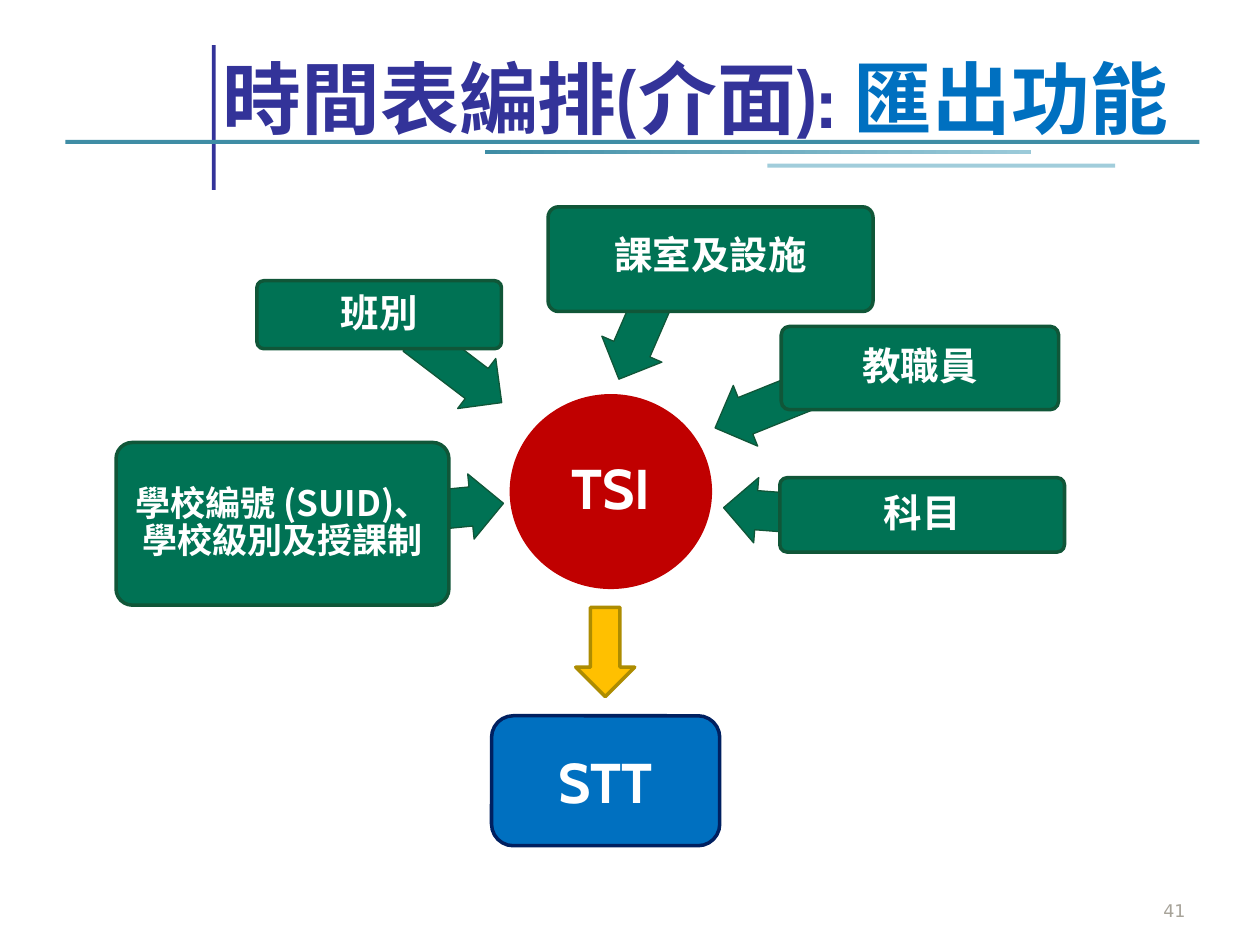
from pptx import Presentation
from pptx.dml.color import RGBColor
from pptx.enum.shapes import MSO_SHAPE
from pptx.enum.text import MSO_ANCHOR, PP_ALIGN
from pptx.oxml.ns import qn
from pptx.util import Cm, Pt
from lxml import etree

RECT = MSO_SHAPE.RECTANGLE
ROUND = MSO_SHAPE.ROUNDED_RECTANGLE
OVAL = MSO_SHAPE.OVAL
LEFT_ARROW = MSO_SHAPE.LEFT_ARROW
RIGHT_ARROW = MSO_SHAPE.RIGHT_ARROW
MIDDLE, BOTTOM = MSO_ANCHOR.MIDDLE, MSO_ANCHOR.BOTTOM
LEFT, CENTER, RIGHT = PP_ALIGN.LEFT, PP_ALIGN.CENTER, PP_ALIGN.RIGHT

INDIGO = RGBColor(0x33, 0x33, 0x99)
TEAL = RGBColor(0x3F, 0x8D, 0xA5)
PALE_TEAL = RGBColor(0x9B, 0xCA, 0xD9)
LIGHT_TEAL = RGBColor(0xA1, 0xCD, 0xDB)
BLUE = RGBColor(0x00, 0x70, 0xC0)
NAVY = RGBColor(0x00, 0x20, 0x60)
RED = RGBColor(0xC0, 0x00, 0x00)
GREEN = RGBColor(0x00, 0x72, 0x54)
DARK_GREEN = RGBColor(0x10, 0x56, 0x38)
GOLD = RGBColor(0xFF, 0xC0, 0x00)
BRONZE = RGBColor(0xAD, 0x8C, 0x01)
GRAY = RGBColor(0xA7, 0xA3, 0x99)
WHITE = RGBColor(0xFF, 0xFF, 0xFF)

LATIN = "Cabin"
CHINESE = "Noto Sans CJK SC"


def add_figure(kind, place, fill, line=None, weight=2.0, turn=0):
    figure = page.shapes.add_shape(kind, *[Cm(value) for value in place])
    figure.shadow.inherit = False
    figure.rotation = turn
    figure.fill.solid()
    figure.fill.fore_color.rgb = fill
    if line is None:
        figure.line.fill.background()
    else:
        figure.line.color.rgb = line
        figure.line.width = Pt(weight)
    return figure


def write(box, runs, size, font, align, anchor, inset, bold=True, spacing=None):
    frame = box.text_frame
    frame.word_wrap = True
    frame.vertical_anchor = anchor
    frame.margin_left = frame.margin_right = Cm(inset)
    frame.margin_top = frame.margin_bottom = Cm(min(inset, 0.13))
    para = frame.paragraphs[0]
    para.alignment = align
    if spacing:
        para.line_spacing = spacing
    for words, color in runs:
        span = para.add_run()
        span.text = words
        span.font.name = font
        span.font.size = Pt(size)
        span.font.bold = bold
        span.font.color.rgb = color
        east_asian = etree.SubElement(span.font._element, qn("a:ea"))
        east_asian.set("typeface", CHINESE)


deck = Presentation()
deck.slide_width, deck.slide_height = Cm(25.4), Cm(19.05)
page = deck.slides.add_slide(deck.slide_layouts[5])

title = page.shapes.title
title.left, title.top, title.width, title.height = Cm(4.24), Cm(0.64), Cm(22.86), Cm(2.39)
write(title, [("時間表編排(介面): ", INDIGO), ("匯出功能", BLUE)],
      45, LATIN, LEFT, BOTTOM, 0.25)

add_figure(RECT, (4.27, 0.91, 0.08, 2.92), INDIGO)
add_figure(RECT, (1.32, 2.82, 22.86, 0.08), TEAL)
fading_bar = add_figure(RECT, (9.78, 3.02, 11, 0.08), TEAL)
fading_bar.fill.gradient()
fading_bar.fill.gradient_angle = 0
for stop, color, position in zip(fading_bar.fill.gradient_stops, (TEAL, PALE_TEAL), (0, 1)):
    stop.color.rgb = color
    stop.position = position
add_figure(RECT, (15.47, 3.3, 7.01, 0.08), LIGHT_TEAL)

hub = add_figure(OVAL, (10.31, 7.98, 4.01, 3.86), RED, RED)
write(hub, [("TSI", WHITE)], 32, LATIN, CENTER, MIDDLE, 0.05, spacing=0.9)

inputs = [
    ("學校編號 (SUID)、 學校級別及授課制", 20, Pt(21),
     (2.34, 8.92, 6.71, 3.28), (5.77, 9.7, 4.39, 1.32), 174.4),
    ("班別", 22, 0.9, (5.18, 5.66, 4.93, 1.37), (8.13, 6.81, 2.21, 1.27), 217.3),
    ("課室及設施", 22, Pt(21), (11.05, 4.17, 6.55, 2.11), (11.91, 6.12, 1.88, 1.32), 293.4),
    ("教職員", 22, 0.9, (15.75, 6.58, 5.59, 1.68), (14.27, 7.21, 4.06, 1.32), 338.1),
    ("科目", 22, 0.9, (15.72, 9.63, 5.74, 1.5), (14.58, 9.73, 4.04, 1.32), 4.4),
]
for words, size, spacing, box_place, arrow_place, turn in inputs:
    arrow = add_figure(LEFT_ARROW, arrow_place, GREEN, DARK_GREEN, 0.75, turn)
    arrow.adjustments[0] = 0.6
    box = add_figure(ROUND, box_place, GREEN, DARK_GREEN)
    box.adjustments[0] = 0.1
    write(box, [(words, WHITE)], size, CHINESE, CENTER, MIDDLE, 0.11, spacing=spacing)

add_figure(RIGHT_ARROW, (11.3, 12.55, 1.8, 1.19), GOLD, BRONZE, turn=90)
output = add_figure(ROUND, (9.91, 14.43, 4.6, 2.62), BLUE, NAVY)
write(output, [("STT", WHITE)], 32, LATIN, CENTER, MIDDLE, 0.25)

number = page.shapes.add_textbox(Cm(18.87), Cm(17.42), Cm(5.28), Cm(1.27))
write(number, [("41", GRAY)], 10, "DejaVu Sans", RIGHT, BOTTOM, 0.25, bold=False)

deck.save("out.pptx")
